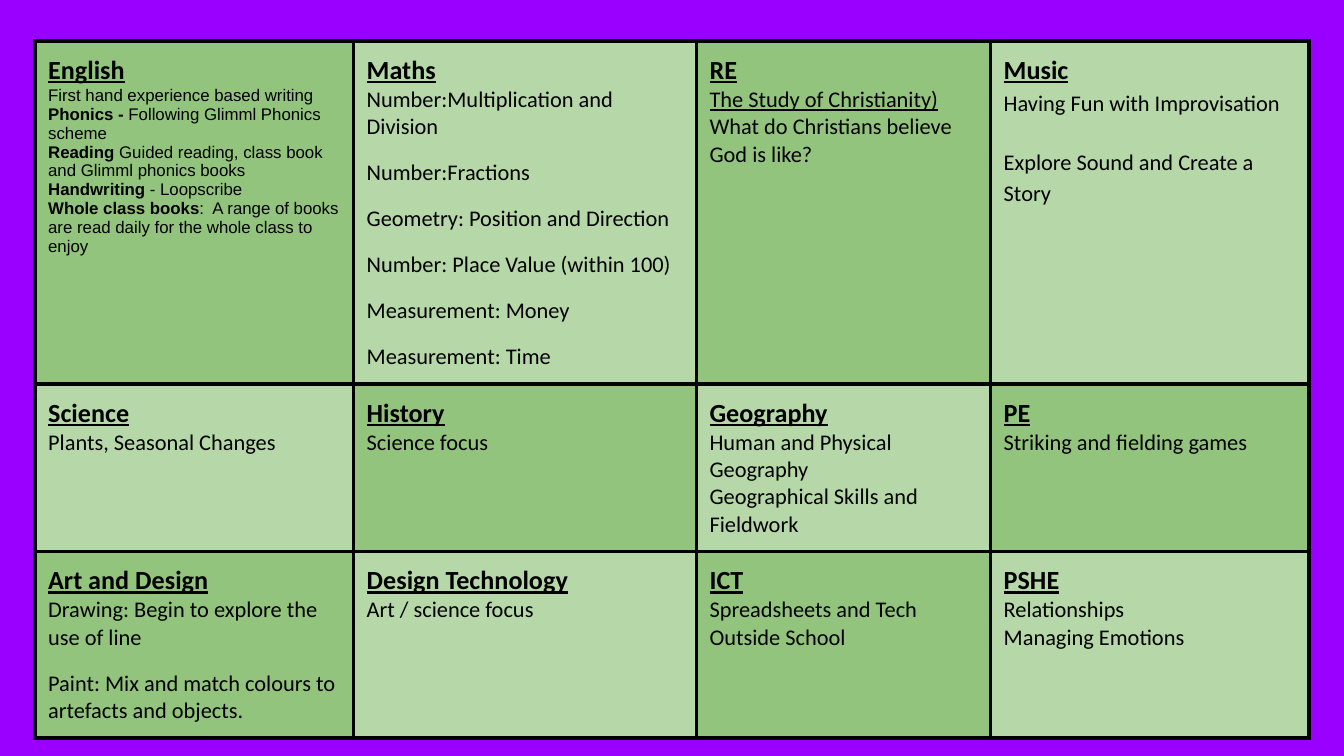
from lxml import etree
from pptx import Presentation
from pptx.dml.color import RGBColor
from pptx.oxml.ns import qn
from pptx.util import Cm, Pt

PURPLE = RGBColor(0x99, 0x00, 0xFF)
DARK_GREEN = RGBColor(0x93, 0xC4, 0x7D)
LIGHT_GREEN = RGBColor(0xB6, 0xD7, 0xA8)
BLACK = RGBColor(0x00, 0x00, 0x00)

COLUMN_WIDTHS = [6.02, 6.48, 5.56, 6.02]
ROW_HEIGHTS = [4.24, 2.11, 2.11]
SMALL = {"font": "Arial", "size": 9}
BOLD = {"bold": True}
SPACED = {"before": 10}


def line(*runs, before=0, after=0, spacing=None, **text_format):
    """Describe a paragraph; each run is text or a (text, format) pair."""
    pairs = [(run, {}) if isinstance(run, str) else run for run in runs]
    return {
        "runs": [(text, {**text_format, **own}) for text, own in pairs],
        "before": before, "after": after, "spacing": spacing,
    }


SUBJECTS = [
    [
        ("English", [
            line("First hand experience based writing", **SMALL),
            line(("Phonics -", BOLD), " Following Glimml Phonics scheme", **SMALL),
            line(("Reading ", BOLD),
                 "Guided reading, class book and Glimml phonics books", **SMALL),
            line(("Handwriting", BOLD), " - Loopscribe", **SMALL),
            line(("Whole class books", BOLD),
                 ":  A range of books are read daily for the whole class to enjoy",
                 **SMALL),
        ]),
        ("Maths", [
            line("Number:Multiplication and Division"),
            line("Number:Fractions", **SPACED),
            line("Geometry: Position and Direction", **SPACED),
            line("Number: Place Value (within 100)", **SPACED),
            line("Measurement: Money", **SPACED),
            line("Measurement: Time", after=10, **SPACED),
        ]),
        ("RE", [
            line("The Study of Christianity)", underline=True),
            line("What do Christians believe God is like?"),
        ]),
        ("Music", [
            line("Having Fun with Improvisation", spacing=1.15),
            line("Explore Sound and Create a Story", before=14.6, spacing=1.15),
        ]),
    ],
    [
        ("Science", [line("Plants, Seasonal Changes")]),
        ("History", [line("Science focus")]),
        ("Geography", [
            line("Human and Physical Geography"),
            line("Geographical Skills and Fieldwork"),
        ]),
        ("PE", [line("Striking and fielding games")]),
    ],
    [
        ("Art and Design", [
            line("Drawing: Begin to explore the use of line"),
            line("Paint: Mix and match colours to artefacts and objects.", **SPACED),
        ]),
        ("Design Technology", [line("Art / science focus")]),
        ("ICT", [line("Spreadsheets and Tech Outside School")]),
        ("PSHE", [line("Relationships"), line("Managing Emotions")]),
    ],
]


def add_text(paragraph, text, font="Calibri", size=12, bold=False, underline=False):
    run = paragraph.add_run()
    run.text = text
    run.font.name = font
    run.font.size = Pt(size)
    run.font.bold = bold
    run.font.underline = underline
    run.font.color.rgb = BLACK


def set_borders(cell, width):
    properties = cell._tc.get_or_add_tcPr()
    for side in ("lnL", "lnR", "lnT", "lnB"):
        border = etree.SubElement(properties, qn(f"a:{side}"), w=str(Pt(width)))
        fill = etree.SubElement(border, qn("a:solidFill"))
        etree.SubElement(fill, qn("a:srgbClr"), val=str(BLACK))


def format_cell(cell, color):
    cell.margin_left = cell.margin_right = Cm(0.25)
    cell.margin_top = cell.margin_bottom = Cm(0.25)
    set_borders(cell, 2.25)
    cell.fill.solid()
    cell.fill.fore_color.rgb = color


def fill_subject(cell, title, lines):
    text_frame = cell.text_frame
    add_text(text_frame.paragraphs[0], title, size=14, bold=True, underline=True)
    for item in lines:
        paragraph = text_frame.add_paragraph()
        paragraph.space_before = Pt(item["before"])
        paragraph.space_after = Pt(item["after"])
        if item["spacing"]:
            paragraph.line_spacing = item["spacing"]
        for text, text_format in item["runs"]:
            add_text(paragraph, text, **text_format)


def add_subject_table(slide):
    table = slide.shapes.add_table(
        len(ROW_HEIGHTS), len(COLUMN_WIDTHS), Cm(0.66), Cm(0.78),
        Cm(sum(COLUMN_WIDTHS)), Cm(sum(ROW_HEIGHTS)),
    ).table
    table.first_row = False
    table.horz_banding = False
    for column, width in zip(table.columns, COLUMN_WIDTHS):
        column.width = Cm(width)
    for row, height in zip(table.rows, ROW_HEIGHTS):
        row.height = Cm(height)
    for row_index, subjects in enumerate(SUBJECTS):
        for column_index, (title, lines) in enumerate(subjects):
            cell = table.cell(row_index, column_index)
            is_light = (row_index + column_index) % 2
            format_cell(cell, LIGHT_GREEN if is_light else DARK_GREEN)
            fill_subject(cell, title, lines)


def main():
    presentation = Presentation()
    presentation.slide_width = Cm(25.4)
    presentation.slide_height = Cm(14.29)
    slide = presentation.slides.add_slide(presentation.slide_layouts[6])
    slide.background.fill.solid()
    slide.background.fill.fore_color.rgb = PURPLE
    add_subject_table(slide)
    presentation.save("out.pptx")


if __name__ == "__main__":
    main()
